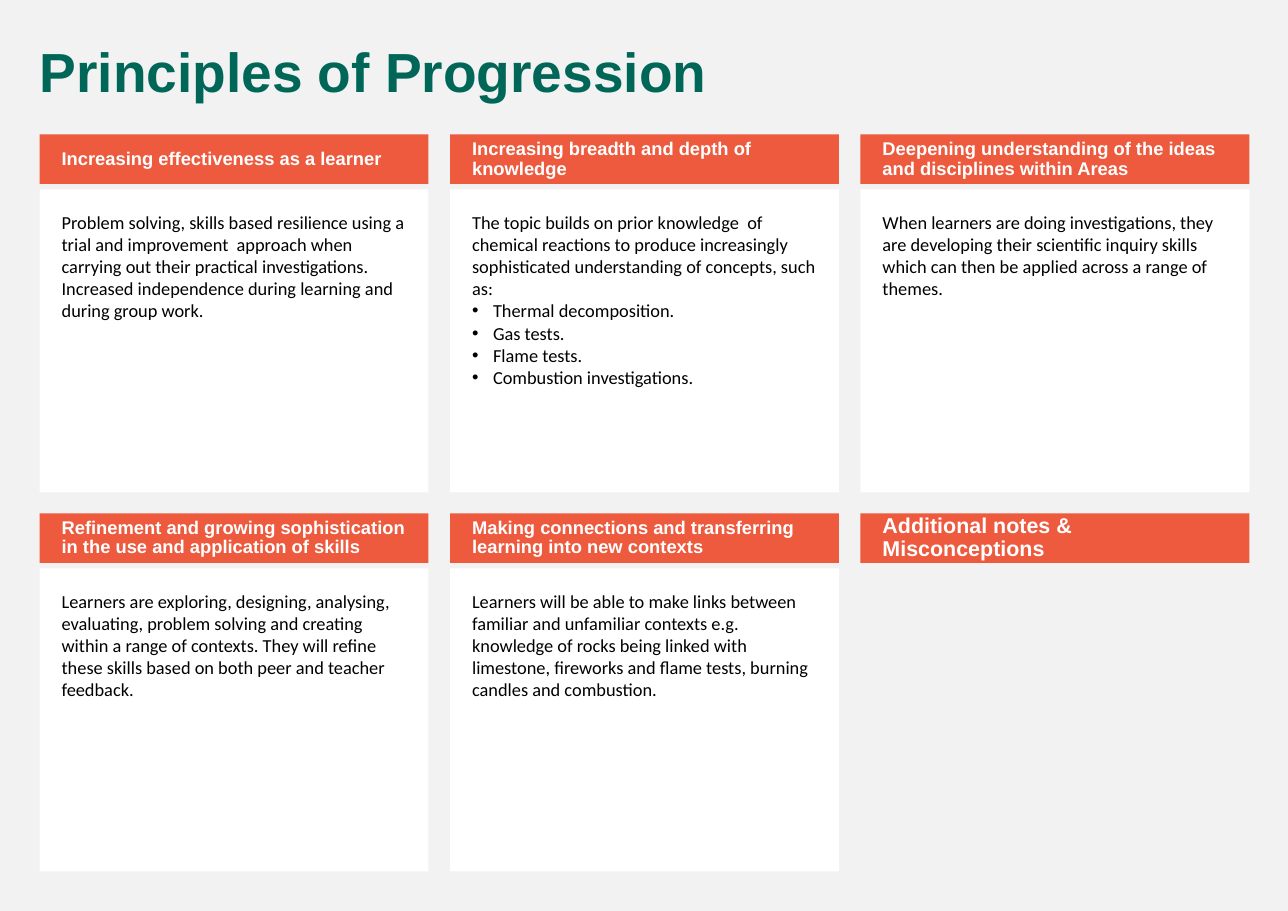
import pptx
import pptx.dml.color
import pptx.enum.shapes
import pptx.enum.text
import pptx.oxml.ns
import pptx.util
from lxml import etree

Inches = pptx.util.Inches
Pt = pptx.util.Pt
Anchor = pptx.enum.text.MSO_ANCHOR

LEFT, TOP = 0.36, 1.22
COLUMN_PITCH = (7.81 - LEFT) / 2
ROW_PITCH = 3.44
CARD_WIDTH = 3.53
HEADER_HEIGHT, BODY_HEIGHT, BODY_OFFSET = 0.45, 2.75, 0.5
BULLET_INDENT = Inches(0.19)

CARDS = [
    ("Increasing effectiveness as a learner", 12, [
        "Problem solving, skills based resilience using a trial and improvement  approach when carrying out their practical investigations.",
        "Increased independence during learning and during group work.",
    ], []),
    ("Increasing breadth and depth of knowledge", 12, [
        "The topic builds on prior knowledge  of chemical reactions to produce increasingly sophisticated understanding of concepts, such as:",
    ], ["Thermal decomposition.", "Gas tests.", "Flame tests.", "Combustion investigations."]),
    ("Deepening understanding of the ideas and disciplines within Areas", 12, [
        "When learners are doing investigations, they are developing their scientific inquiry skills which can then be applied across a range of themes.",
    ], []),
    ("Refinement and growing sophistication in the use and application of skills", 12, [
        "Learners are exploring, designing, analysing, evaluating, problem solving and creating within a range of contexts. They will refine these skills based on both peer and teacher feedback.",
    ], []),
    ("Making connections and transferring learning into new contexts", 12, [
        "Learners will be able to make links between familiar and unfamiliar contexts e.g. knowledge of rocks being linked with limestone, fireworks and flame tests, burning candles and combustion.",
    ], []),
    ("Additional notes & Misconceptions", 14, [], []),
]


def set_color(target, color):
    target.rgb = pptx.dml.color.RGBColor.from_string(color)


def write(shape, lines, font, size, color, anchor, insets, heading):
    frame = shape.text_frame
    frame.text = "\n".join(lines)
    frame.word_wrap = True
    frame.auto_size = pptx.enum.text.MSO_AUTO_SIZE.NONE
    frame.vertical_anchor = anchor
    frame.margin_left, frame.margin_top, frame.margin_right, frame.margin_bottom = map(Inches, insets)
    for paragraph in frame.paragraphs:
        paragraph.alignment = pptx.enum.text.PP_ALIGN.LEFT
        if heading:
            paragraph.line_spacing = 0.9
            paragraph.space_before = Pt(11)
        for run in paragraph.runs:
            run.font.name = font
            run.font.size = Pt(size)
            run.font.bold = heading
            set_color(run.font.color, color)


presentation = pptx.Presentation()
presentation.slide_width = Inches(11.69)
presentation.slide_height = Inches(8.27)
slide = presentation.slides.add_slide(presentation.slide_layouts[5])
slide.background.fill.solid()
set_color(slide.background.fill.fore_color, "F2F2F2")

title = slide.shapes.title
title.left, title.top, title.width, title.height = map(Inches, (0.26, 0.36, 11.08, 0.65))
write(title, ["Principles of Progression"], "Arial", 36, "006758", Anchor.TOP, (0.1, 0.05, 0.1, 0.05), True)

for index, (heading, heading_size, sentences, bullets) in enumerate(CARDS):
    row, column = divmod(index, 3)
    left = LEFT + column * COLUMN_PITCH
    top = TOP + row * ROW_PITCH
    parts = [("ED5A3E", top, HEADER_HEIGHT, [heading])]
    if sentences:
        parts.append(("FFFFFF", top + BODY_OFFSET, BODY_HEIGHT, sentences + bullets))
    for fill, part_top, height, lines in parts:
        shape = slide.shapes.add_shape(
            pptx.enum.shapes.MSO_SHAPE.RECTANGLE,
            Inches(left), Inches(part_top), Inches(CARD_WIDTH), Inches(height))
        shape.shadow.inherit = False
        shape.fill.solid()
        set_color(shape.fill.fore_color, fill)
        shape.line.fill.background()
        if lines == [heading]:
            write(shape, lines, "Arial", heading_size, "FFFFFF", Anchor.MIDDLE, (0.2, 0.05, 0.1, 0.05), True)
        else:
            write(shape, lines, "Calibri", 12, "000000", Anchor.TOP, (0.2, 0.2, 0.2, 0.2), False)
            for paragraph in shape.text_frame.paragraphs[len(sentences):]:
                properties = paragraph._p.get_or_add_pPr()
                properties.set("marL", str(BULLET_INDENT))
                properties.set("indent", str(-BULLET_INDENT))
                etree.SubElement(properties, pptx.oxml.ns.qn("a:buFont"), typeface="Arial")
                etree.SubElement(properties, pptx.oxml.ns.qn("a:buChar"), char="•")

presentation.save("out.pptx")
